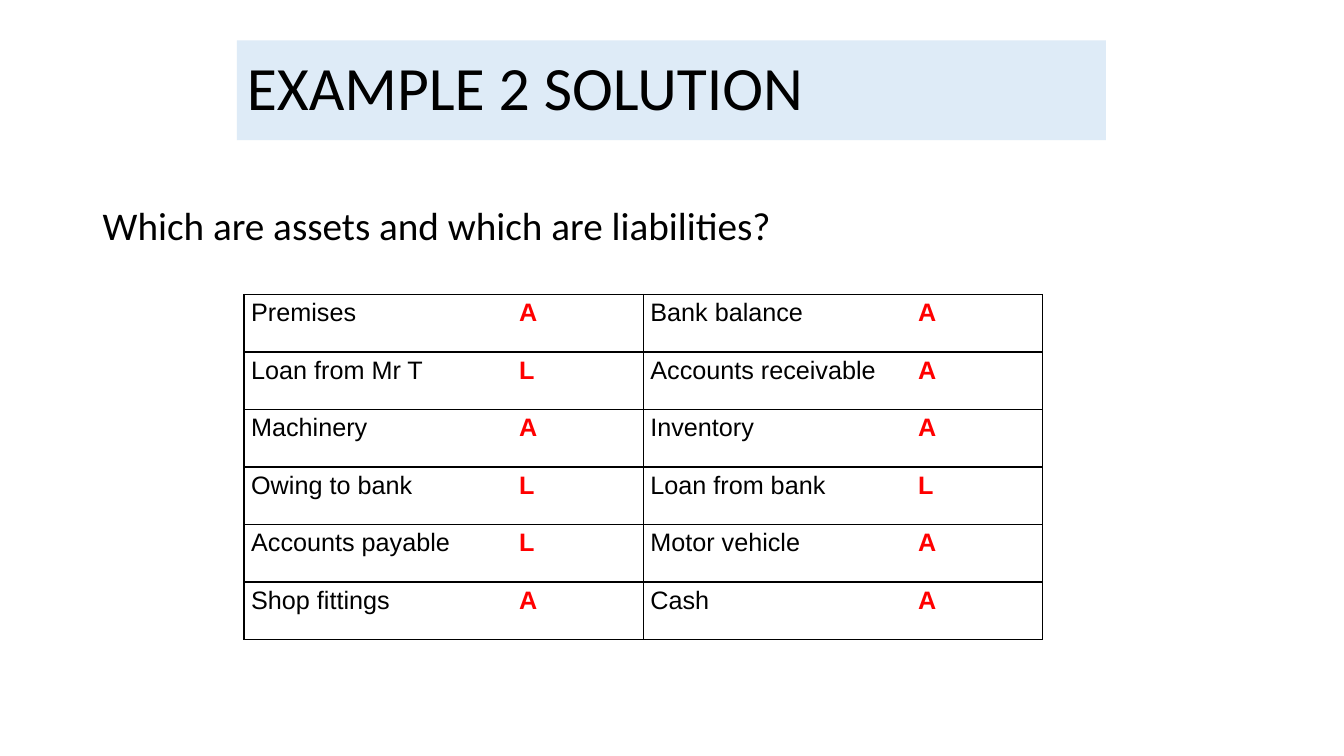
"""Build the Example 2 solution slide: assets (A) and liabilities (L)."""
import pptx
import pptx.dml.color
import pptx.enum.shapes
import pptx.enum.text
import pptx.oxml
import pptx.oxml.ns
import pptx.util

Cm = pptx.util.Cm
Pt = pptx.util.Pt
COLORS = {"text": "000000", "mark": "FF0000", "banner": "DEEBF7", "border": "000000"}
NAMESPACE = pptx.oxml.ns.nsdecls("a")
MARK_POSITION = Cm(6.75)
ANSWERS = [
    [("Premises", "A"), ("Bank balance", "A")],
    [("Loan from Mr T", "L"), ("Accounts receivable", "A")],
    [("Machinery", "A"), ("Inventory", "A")],
    [("Owing to bank", "L"), ("Loan from bank", "L")],
    [("Accounts payable", "L"), ("Motor vehicle", "A")],
    [("Shop fittings", "A"), ("Cash", "A")],
]


def format_run(run, name, size, color, bold=False):
    run.font.name = name
    run.font.size = Pt(size)
    run.font.bold = bold
    run.font.color.rgb = pptx.dml.color.RGBColor.from_string(COLORS[color])


def add_borders(cell):
    properties = cell._tc.get_or_add_tcPr()
    for position, side in enumerate(("lnL", "lnR", "lnT", "lnB")):
        properties.insert(position, pptx.oxml.parse_xml(
            f'<a:{side} {NAMESPACE} w="{Pt(1)}"><a:solidFill>'
            f'<a:srgbClr val="{COLORS["border"]}"/></a:solidFill></a:{side}>'))


presentation = pptx.Presentation()
presentation.slide_width = Cm(33.87)
presentation.slide_height = Cm(19.05)
slide = presentation.slides.add_slide(presentation.slide_layouts[6])

title = slide.shapes.add_shape(
    pptx.enum.shapes.MSO_SHAPE.RECTANGLE, Cm(5.97), Cm(1.02), Cm(21.9), Cm(2.51))
title.shadow.inherit = False
title.fill.solid()
title.fill.fore_color.rgb = pptx.dml.color.RGBColor.from_string(COLORS["banner"])
title.line.fill.background()
title.text_frame.text = "EXAMPLE 2 SOLUTION"
title.text_frame.vertical_anchor = pptx.enum.text.MSO_ANCHOR.MIDDLE

question = slide.shapes.add_textbox(Cm(2.34), Cm(5.08), Cm(29.21), Cm(12.09))
question.text_frame.text = "Which are assets and which are liabilities?"

for shape, size in ((title, 44), (question, 28)):
    shape.text_frame.word_wrap = True
    paragraph = shape.text_frame.paragraphs[0]
    paragraph.alignment = pptx.enum.text.PP_ALIGN.LEFT
    paragraph.line_spacing = 0.9
    format_run(paragraph.runs[0], "Calibri", size, "text")

table = slide.shapes.add_table(
    len(ANSWERS), 2, Cm(6.15), Cm(7.42), Cm(20.12), Cm(8.7)).table
table.first_row = False
table.horz_banding = False

for row, answers in enumerate(ANSWERS):
    for column, (item, mark) in enumerate(answers):
        cell = table.cell(row, column)
        cell.fill.background()
        add_borders(cell)
        cell.margin_left = cell.margin_right = Cm(0.18)
        cell.margin_top = cell.margin_bottom = 0
        paragraph = cell.text_frame.paragraphs[0]
        paragraph._p.get_or_add_pPr().append(pptx.oxml.parse_xml(
            f'<a:tabLst {NAMESPACE}><a:tab pos="{MARK_POSITION}" algn="l"/></a:tabLst>'))
        paragraph.line_spacing = 1.15
        for text, color in ((f"{item}\t", "text"), (mark, "mark")):
            run = paragraph.add_run()
            run.text = text
            format_run(run, "Arial", 18, color, bold=color == "mark")

presentation.save("out.pptx")
